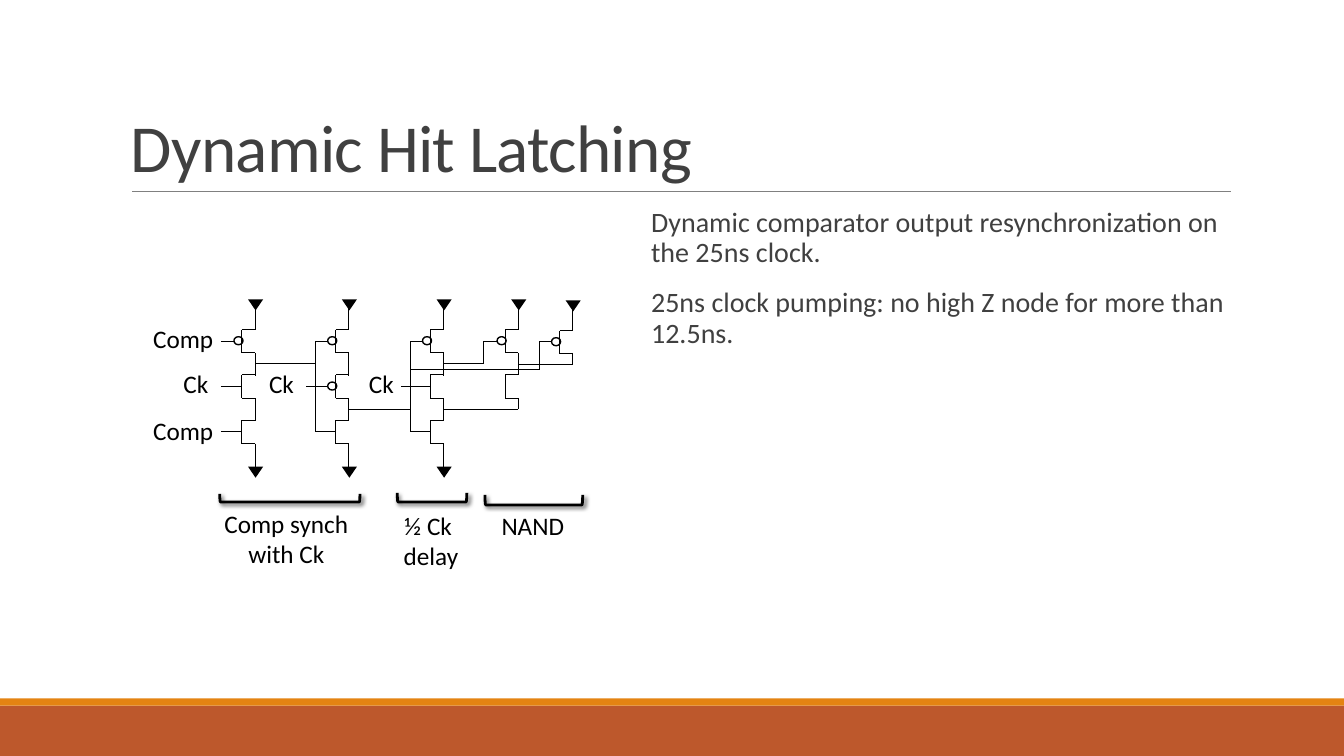
from lxml.etree import SubElement
from pptx import Presentation
from pptx.dml.color import RGBColor
from pptx.enum.shapes import MSO_CONNECTOR as CONNECTOR, MSO_SHAPE as SHAPE
from pptx.enum.text import MSO_ANCHOR as ANCHOR, MSO_AUTO_SIZE as AUTO_SIZE, PP_ALIGN as ALIGN
from pptx.oxml.ns import qn
from pptx.util import Inches, Pt

BLACK = RGBColor(0x00, 0x00, 0x00)
GRAY = RGBColor(0x80, 0x80, 0x80)
DARK = RGBColor(0x40, 0x40, 0x40)
RUST = RGBColor(0xBD, 0x58, 0x2C)
ORANGE = RGBColor(0xE4, 0x83, 0x12)

WIDTH, HEIGHT = 13.33, 7.5
# Schematic grid: one column per chain of transistors, one row per transistor
COLUMNS = SYNC_IN, SYNC_OUT, DELAY, NAND_A, NAND_B = 2.53, 3.46, 4.4, 5.14, 5.68
ROW_PITCH = 0.45
ROWS = TOP, MIDDLE, BOTTOM = [3.27 + ROW_PITCH * row for row in range(3)]
CHANNEL = 0.23      # height of a transistor and length of the leads between them
GATE_OFFSET = 0.13  # from the column to the gate plate
BUBBLE_WIDTH, BUBBLE_HEIGHT = 0.09, 0.08
BUBBLE_OFFSET = GATE_OFFSET + BUBBLE_WIDTH - 0.01


def add_text(slide, box, lines, size=18, color=BLACK, align=ALIGN.LEFT, anchor=ANCHOR.TOP,
             wrap=False, line_spacing=None, before=0, after=0, tracking=None):
    shape = slide.shapes.add_textbox(*map(Inches, box))
    frame = shape.text_frame
    frame.word_wrap = wrap
    frame.auto_size = AUTO_SIZE.NONE if wrap else AUTO_SIZE.SHAPE_TO_FIT_TEXT
    frame.vertical_anchor = anchor
    for index, line in enumerate(lines):
        paragraph = frame.paragraphs[0] if index == 0 else frame.add_paragraph()
        paragraph.alignment = align
        paragraph.line_spacing = line_spacing
        paragraph.space_before = Pt(before if index else 0)
        paragraph.space_after = Pt(after)
        run = paragraph.add_run()
        run.text = line
        run.font.name = "Calibri"
        run.font.size = Pt(size)
        run.font.color.rgb = color
        if tracking is not None:
            run.font._element.set("spc", str(round(tracking * 100)))


def add_outline(slide, kind, box, fill=None, line=None):
    """Add a preset shape; line is the width of a black outline in points."""
    shape = slide.shapes.add_shape(kind, *map(Inches, box))
    shape.shadow.inherit = False
    if fill is None:
        shape.fill.background()
    else:
        shape.fill.solid()
        shape.fill.fore_color.rgb = fill
    if line is None:
        shape.line.fill.background()
    else:
        shape.line.color.rgb = BLACK
        shape.line.width = Pt(line)
    return shape


def add_wire(slide, *points, color=BLACK, width=0.75):
    """Join the points, one after the other, with straight lines."""
    for start, end in zip(points, points[1:]):
        line = slide.shapes.add_connector(CONNECTOR.STRAIGHT, *map(Inches, start + end))
        line.line.color.rgb = color
        line.line.width = Pt(width)
        SubElement(line._element.spPr, qn("a:effectLst"))


def add_transistor(slide, column, top, bubble=False):
    gate, bottom = column - GATE_OFFSET, top + CHANNEL
    add_wire(slide, (column, top), (gate, top), (gate, bottom), (column, bottom))
    if bubble:
        box = column - BUBBLE_OFFSET, top + 0.07, BUBBLE_WIDTH, BUBBLE_HEIGHT
        add_outline(slide, SHAPE.OVAL, box, line=1)


def add_rail(slide, column, top):
    triangle = add_outline(slide, SHAPE.ISOSCELES_TRIANGLE,
                           (column - 0.07, top, 0.15, 0.11), fill=BLACK)
    triangle._element.spPr.find(qn("a:xfrm")).set("flipV", "1")


def add_bracket(slide, left, bottom, span, depth):
    """Add a bracket that opens upwards: a left bracket, turned."""
    middle = left + span / 2
    box = middle - depth / 2, bottom - depth / 2 - span / 2, depth, span
    bracket = add_outline(slide, SHAPE.LEFT_BRACKET, box, line=2)
    bracket.rotation = 270
    effects = bracket._element.spPr.find(qn("a:effectLst"))
    shadow = SubElement(effects, qn("a:outerShdw"), blurRad=str(Pt(3)), dist=str(Pt(2)),
                        dir=str(45 * 60000), rotWithShape="0")
    color = SubElement(shadow, qn("a:srgbClr"), val=str(BLACK))
    SubElement(color, qn("a:alpha"), val="60000")


def gate_level(top):
    return top + CHANNEL / 2


def add_frame(slide):
    add_outline(slide, SHAPE.RECTANGLE, (0, 7, WIDTH, 0.5), fill=RUST)
    add_outline(slide, SHAPE.RECTANGLE, (0, 6.93, WIDTH, 0.07), fill=ORANGE)
    add_wire(slide, (1.31, 1.9), (12.21, 1.9), color=GRAY, width=0.5)
    add_text(slide, (1.2, 0.31, 11, 1.59), ["Dynamic Hit Latching"], size=48, color=DARK,
             anchor=ANCHOR.BOTTOM, wrap=True, line_spacing=0.85, tracking=-0.5)
    add_text(slide, (6.36, 2.02, 5.94, 1.86),
             ["Dynamic comparator output resynchronization on the 25ns clock.",
              "25ns clock pumping: no high Z node for more than 12.5ns."],
             size=20, color=DARK, wrap=True, line_spacing=0.9, before=12, after=2)


def add_stages(slide):
    for column in COLUMNS:
        top = TOP + 0.01 if column == NAND_B else TOP
        add_rail(slide, column, top - 0.3)
        add_wire(slide, (column, top - CHANNEL), (column, top))
        add_transistor(slide, column, top, bubble=True)
    for column in (SYNC_IN, SYNC_OUT, DELAY):
        add_transistor(slide, column, MIDDLE, bubble=column == SYNC_OUT)
        add_transistor(slide, column, BOTTOM)
        for top in ROWS:
            add_wire(slide, (column, top + CHANNEL), (column, top + 2 * CHANNEL))
        add_rail(slide, column, BOTTOM + 2 * CHANNEL)
    add_transistor(slide, NAND_A, MIDDLE)
    add_wire(slide, (NAND_A, TOP + CHANNEL), (NAND_A, MIDDLE))


def add_wiring(slide):
    upper, clock, lower = map(gate_level, ROWS)
    sync_node, feed_node, delay_node = 3.61, 3.67, 4.06
    sync_bus, delay_bus, input_left = 3.13, 4.07, 2.19

    add_wire(slide, (input_left, upper), (SYNC_IN - BUBBLE_OFFSET, upper))
    for level in (clock, lower):
        add_wire(slide, (input_left, level), (SYNC_IN - GATE_OFFSET, level))
    add_wire(slide, (3.04, clock), (SYNC_OUT - BUBBLE_OFFSET, clock))
    add_wire(slide, (3.98, clock), (DELAY - GATE_OFFSET, clock))
    for bus, column in ((sync_bus, SYNC_OUT), (delay_bus, DELAY)):
        add_wire(slide, (column - BUBBLE_OFFSET, upper), (bus, upper),
                 (bus, lower), (column - GATE_OFFSET, lower))

    add_wire(slide, (SYNC_IN, sync_node), (sync_bus, sync_node))
    add_wire(slide, (SYNC_OUT, delay_node), (delay_bus, delay_node))
    add_wire(slide, (DELAY, sync_node), (4.8, sync_node), (4.8, upper),
             (NAND_A - BUBBLE_OFFSET, upper))
    add_wire(slide, (delay_bus, feed_node), (5.35, feed_node), (5.35, upper),
             (NAND_B - BUBBLE_OFFSET, upper))
    add_wire(slide, (DELAY, delay_node), (NAND_A, delay_node), (NAND_A, MIDDLE + CHANNEL))
    add_wire(slide, (NAND_B, TOP + CHANNEL), (NAND_B, 3.62), (NAND_A, 3.62))


def add_labels(slide):
    for top in (3.16, 4.07):
        add_text(slide, (1.42, top, 0.81, 0.4), ["Comp"])
    for left in (1.72, 2.57, 3.56):
        add_text(slide, (left, 3.61, 0.45, 0.4), ["Ck"])
    add_bracket(slide, 2.18, 4.98, 1.39, 0.08)
    add_bracket(slide, 3.94, 4.98, 0.69, 0.09)
    add_bracket(slide, 4.81, 5.01, 0.97, 0.1)
    for box, lines in (((2.12, 4.99, 1.44, 0.71), ["Comp synch", "with Ck"]),
                       ((3.9, 5.01, 0.75, 0.71), ["½ Ck ", "delay"]),
                       ((4.87, 5.01, 0.83, 0.4), ["NAND"])):
        add_text(slide, box, lines, align=ALIGN.CENTER)


def main():
    presentation = Presentation()
    presentation.slide_width, presentation.slide_height = Inches(WIDTH), Inches(HEIGHT)
    slide = presentation.slides.add_slide(presentation.slide_layouts[6])
    add_frame(slide)
    add_stages(slide)
    add_wiring(slide)
    add_labels(slide)
    presentation.save("out.pptx")


if __name__ == "__main__":
    main()
